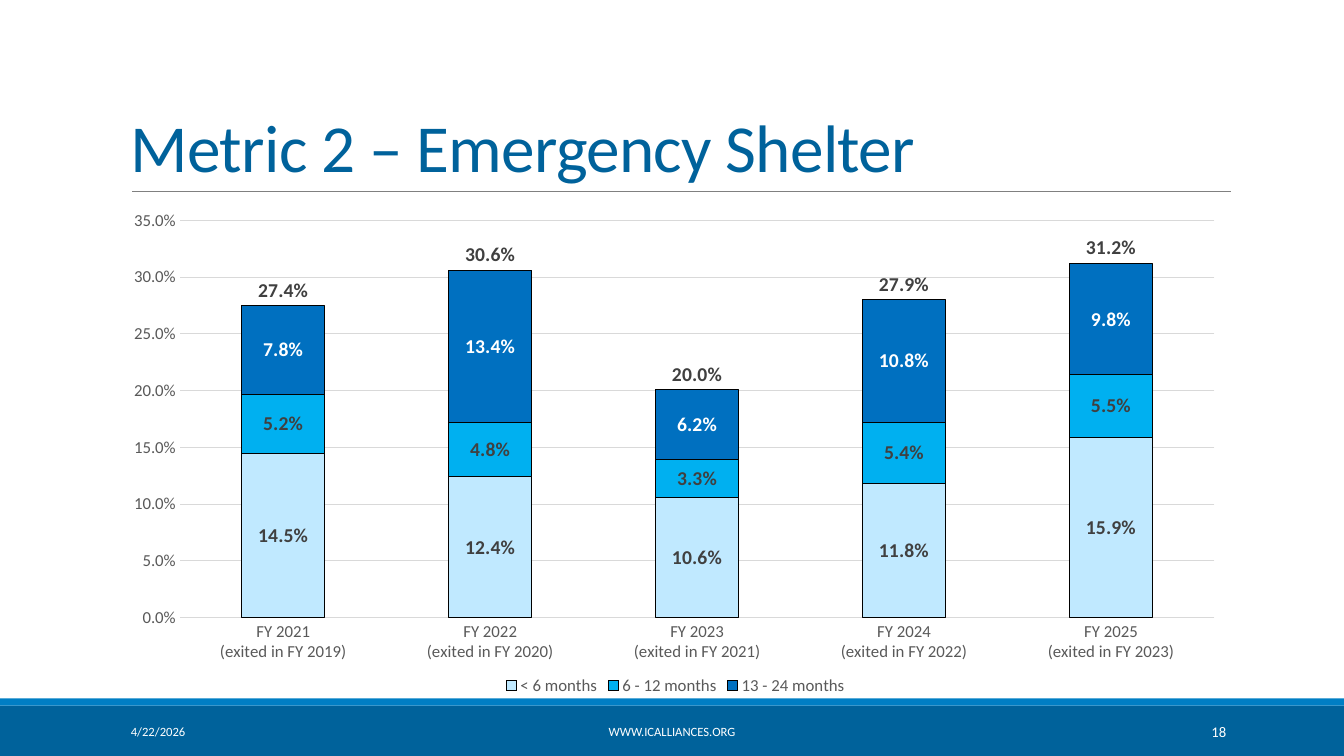
from lxml import etree
from pptx import Presentation, util as u
from pptx.chart.data import CategoryChartData
from pptx.dml.color import RGBColor
from pptx.enum import chart as c, shapes, text
from pptx.oxml import parse_xml
from pptx.oxml.ns import nsdecls, qn

PX = 9144  # 100 px to the inch
FONT = "Calibri"
NAVY = RGBColor(0x00, 0x62, 0x9B)
BLUE = RGBColor(0x00, 0x7E, 0xC4)
WHITE = RGBColor(0xFF, 0xFF, 0xFF)
BLACK = RGBColor(0x00, 0x00, 0x00)
RULE = RGBColor(0x80, 0x80, 0x80)
GRID = RGBColor(0xD9, 0xD9, 0xD9)
AXIS_TEXT = RGBColor(0x59, 0x59, 0x59)
LABEL_TEXT = RGBColor(0x40, 0x40, 0x40)
PALE = RGBColor(0xC0, 0xE9, 0xFF)
SKY = RGBColor(0x00, 0xB0, 0xF0)
STRONG = RGBColor(0x00, 0x70, 0xC0)

YEARS = range(2021, 2026)
# name, values, fill, label colour
BANDS = [
    ("< 6 months", (0.145, 0.124, 0.106, 0.118, 0.159), PALE, LABEL_TEXT),
    ("6 - 12 months", (0.052, 0.048, 0.033, 0.054, 0.055), SKY, LABEL_TEXT),
    ("13 - 24 months", (0.078, 0.134, 0.062, 0.108, 0.098), STRONG, WHITE),
]
TOTALS = ("Series 4", (0.274, 0.306, 0.2, 0.279, 0.312))


def emu(box):
    return [u.Emu(length * PX) for length in box]


def set_font(font, size, colour, bold=False):
    for name, value in {"name": FONT, "size": u.Pt(size), "bold": bold}.items():
        setattr(font, name, value)
    font.color.rgb = colour


def set_line(line, colour, width=0.75):
    line.color.rgb = colour
    line.width = u.Pt(width)


def add_text(page, box, words, size, colour, align=text.PP_ALIGN.LEFT,
             anchor=text.MSO_ANCHOR.MIDDLE):
    frame = page.shapes.add_textbox(*emu(box)).text_frame
    frame.word_wrap = True
    frame.vertical_anchor = anchor
    para = frame.paragraphs[0]
    para.alignment = align
    span = para.add_run()
    span.text = words
    set_font(span.font, size, colour)
    return para


def add_band(page, box, colour):
    band = page.shapes.add_shape(shapes.MSO_SHAPE.RECTANGLE, *emu(box))
    band.shadow.inherit = False
    band.fill.solid()
    band.fill.fore_color.rgb = colour
    band.line.fill.background()


def add_heading(page, box):
    """Title standing on a thin rule at the bottom of the box."""
    left, top, width, height = box
    para = add_text(page, box, "Metric 2 – Emergency Shelter", 48, NAVY,
                    anchor=text.MSO_ANCHOR.BOTTOM)
    para.line_spacing = 0.85
    para.runs[0].font._element.set("spc", "-50")
    base = top + height
    ends = emu((left + 11, base, left + width + 1, base))
    rule = page.shapes.add_connector(shapes.MSO_CONNECTOR.STRAIGHT, *ends)
    set_line(rule.line, RULE, 0.5)
    etree.SubElement(rule._element.spPr, qn("a:effectLst"))


def move_totals_to_line(chart):
    """Turn the last bar series into a line series on the same axes."""
    bars = chart._chartSpace.xpath(".//c:barChart")[0]
    totals = bars.findall(qn("c:ser"))[-1]
    for flag in totals.findall(qn("c:invertIfNegative")):
        totals.remove(flag)
    line = parse_xml(f'<c:lineChart {nsdecls("c")}><c:grouping val="standard"/>'
                     '<c:varyColors val="0"/></c:lineChart>')
    line.append(totals)
    etree.SubElement(line, qn("c:marker")).set("val", "1")
    for axis in bars.findall(qn("c:axId")):
        etree.SubElement(line, qn("c:axId")).set("val", axis.get("val"))
    bars.addnext(line)


def place_plot(chart, **fractions):
    """Fix the inner plot area as fractions of the chart."""
    area = chart._chartSpace.xpath(".//c:plotArea")[0]
    for layout in area.findall(qn("c:layout")):
        area.remove(layout)
    modes = '<c:layoutTarget val="inner"/><c:xMode val="edge"/><c:yMode val="edge"/>'
    sizes = "".join(f'<c:{key} val="{value}"/>' for key, value in fractions.items())
    area.insert(0, parse_xml(f'<c:layout {nsdecls("c")}><c:manualLayout>{modes}{sizes}'
                             '</c:manualLayout></c:layout>'))


def format_labels(series, colour):
    labels = series.data_labels
    for name, value in {"show_value": True, "number_format": "0.0%",
                        "number_format_is_linked": False}.items():
        setattr(labels, name, value)
    set_font(labels.font, 14, colour, True)
    return labels


def format_axes(chart):
    for axis in (chart.category_axis, chart.value_axis):
        axis.major_tick_mark = axis.minor_tick_mark = c.XL_TICK_MARK.NONE
        set_font(axis.tick_labels.font, 12, AXIS_TEXT)
    set_line(chart.category_axis.format.line, GRID)
    values = chart.value_axis
    for name, value in {"minimum_scale": 0, "maximum_scale": 0.35, "major_unit": 0.05,
                        "has_major_gridlines": True}.items():
        setattr(values, name, value)
    values.format.line.fill.background()
    set_line(values.major_gridlines.format.line, GRID)
    values.tick_labels.number_format = "0.0%"
    values.tick_labels.number_format_is_linked = False


def format_legend(chart):
    chart.has_legend = True
    legend = chart.legend
    legend.position = c.XL_LEGEND_POSITION.BOTTOM
    legend.include_in_layout = False
    set_font(legend.font, 12, AXIS_TEXT)
    legend._element.insert(1, parse_xml(
        f'<c:legendEntry {nsdecls("c")}><c:idx val="{len(BANDS)}"/>'
        '<c:delete val="1"/></c:legendEntry>'))


def add_returns_chart(page, box):
    data = CategoryChartData(number_format="0.0%")
    data.categories = [f"FY {year}\n(exited in FY {year - 2})" for year in YEARS]
    for name, values, *_ in BANDS + [TOTALS]:
        data.add_series(name, values)
    chart = page.shapes.add_chart(c.XL_CHART_TYPE.COLUMN_STACKED, *emu(box), data).chart
    chart.has_title = False
    set_font(chart.font, 10, BLACK)
    move_totals_to_line(chart)
    place_plot(chart, x=0.053, y=0.057, w=0.933, h=0.782)
    columns, line = chart.plots
    for name, value in {"gap_width": 150, "overlap": 100,
                        "vary_by_categories": False}.items():
        setattr(columns, name, value)
    for series, (_, _, fill, label) in zip(columns.series, BANDS):
        series.format.fill.solid()
        series.format.fill.fore_color.rgb = fill
        set_line(series.format.line, BLACK)
        format_labels(series, label)
    totals = line.series[0]
    totals.smooth = False
    totals.format.line.fill.background()
    totals.marker.style = c.XL_MARKER_STYLE.NONE
    format_labels(totals, LABEL_TEXT).position = c.XL_LABEL_POSITION.ABOVE
    format_axes(chart)
    format_legend(chart)


def add_footer(page, box):
    left, top, width, height = box
    add_band(page, (left, top + 7, width, height - 7), NAVY)
    add_band(page, (left, top, width, 7), BLUE)
    for x, span_width, words, size, align in (
            (120, 270, "4/22/2026", 9, text.PP_ALIGN.LEFT),
            (403, 527, "WWW.ICALLIANCES.ORG", 9, text.PP_ALIGN.CENTER),
            (1083, 143, "18", 10.5, text.PP_ALIGN.RIGHT)):
        add_text(page, (left + x, top + 13, span_width, 40), words, size, WHITE, align)


def main():
    deck = Presentation()
    deck.slide_width, deck.slide_height = emu((1333, 750))
    page = deck.slides.add_slide(deck.slide_layouts[6])
    add_footer(page, (0, 693, 1333, 57))
    add_heading(page, (120, 31, 1100, 159))
    add_returns_chart(page, (120, 190, 1100, 504))
    deck.save("out.pptx")


if __name__ == "__main__":
    main()
